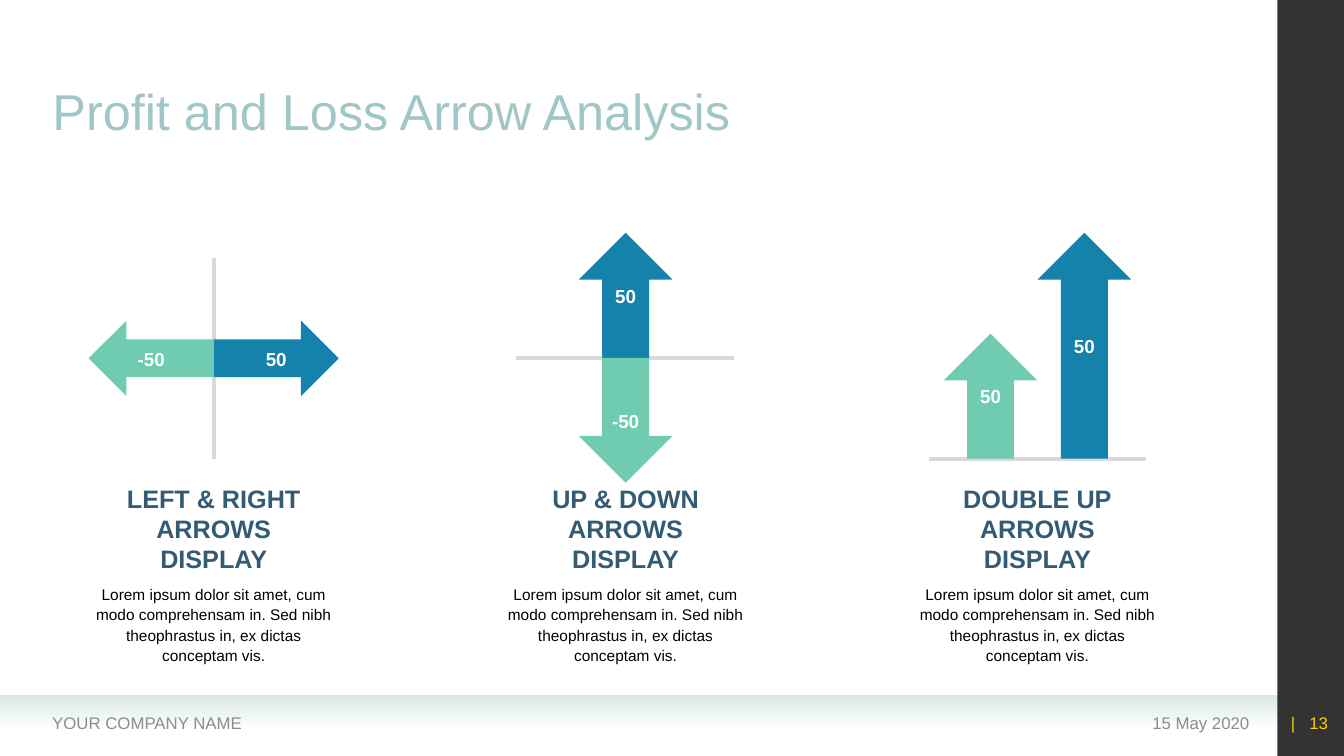
"""Build the profit and loss arrow analysis slide."""
from dataclasses import dataclass

from lxml.etree import SubElement
from pptx import Presentation
from pptx.dml.color import RGBColor
from pptx.enum.shapes import MSO_CONNECTOR, MSO_SHAPE as SHAPE
from pptx.enum.text import MSO_ANCHOR as ANCHOR, PP_ALIGN as ALIGN
from pptx.oxml.ns import qn
from pptx.util import Inches, Pt

Box = tuple[float, float, float, float]

BLUE, GREEN, GREY = "1482AB", "70CCB1", "D9D9D9"
COLUMN_LEFT, COLUMN_STEP, COLUMN_WIDTH = 0.88, 4.085, 2.48
LABEL_WIDTH, LABEL_HEIGHT = 0.5, 0.33
HEADING_WIDTH = 2.26
LOREM = ("Lorem ipsum dolor sit amet, cum modo comprehensam in. "
         "Sed nibh theophrastus in, ex dictas conceptam vis.")


@dataclass
class TextStyle:
    size: float
    color: str
    bold: bool = False
    align: ALIGN = ALIGN.CENTER
    anchor: ANCHOR = ANCHOR.BOTTOM
    wrap: bool = True
    line_spacing: float | Pt | None = None
    space_before: Pt | None = None
    inset_x: float = 0.1
    inset_y: float = 0.05


@dataclass
class Arrow:
    preset: SHAPE
    box: Box
    color: str
    value: str


@dataclass
class Column:
    heading: str
    axis: Box
    arrows: list[Arrow]


TITLE = TextStyle(36, "A0C7C5", align=ALIGN.LEFT, line_spacing=0.9)
VALUE = TextStyle(13.4, "FFFFFF", bold=True, wrap=False)
HEADING = TextStyle(18, "335B74", bold=True)
BODY = TextStyle(11, "000000", anchor=ANCHOR.TOP, line_spacing=Pt(14.7),
                 space_before=Pt(2.2), inset_x=0.04, inset_y=0.02)
COMPANY = TextStyle(12, "8C8C8C", align=ALIGN.LEFT, anchor=ANCHOR.MIDDLE)
DATE = TextStyle(12, "8C8C8C", align=ALIGN.RIGHT, anchor=ANCHOR.MIDDLE)
PAGE = TextStyle(12, "FFCC00", align=ALIGN.RIGHT, anchor=ANCHOR.MIDDLE)

COLUMNS = [
    Column("LEFT & RIGHT", (2.12, 2.56, 2.12, 4.55), [
        Arrow(SHAPE.RIGHT_ARROW, (2.12, 3.18, 1.24, 0.75), BLUE, "50"),
        Arrow(SHAPE.LEFT_ARROW, (0.88, 3.18, 1.24, 0.75), GREEN, "-50")]),
    Column("UP & DOWN", (7.28, 3.55, 5.12, 3.55), [
        Arrow(SHAPE.UP_ARROW, (5.74, 2.31, 0.93, 1.24), BLUE, "50"),
        Arrow(SHAPE.DOWN_ARROW, (5.74, 3.55, 0.93, 1.24), GREEN, "-50")]),
    Column("DOUBLE UP", (11.37, 4.55, 9.21, 4.55), [
        Arrow(SHAPE.UP_ARROW, (9.36, 3.31, 0.93, 1.24), GREEN, "50"),
        Arrow(SHAPE.UP_ARROW, (10.29, 2.31, 0.93, 2.24), BLUE, "50")]),
]

FOOTERS = [
    ("15 May 2020", (9.1, 6.97, 3.39, 0.4), DATE),
    ("YOUR COMPANY NAME", (0.42, 6.97, 4.9, 0.4), COMPANY),
    ("|   13", (12.6, 6.97, 0.67, 0.4), PAGE),
]


def rgb(value: str) -> RGBColor:
    return RGBColor.from_string(value)


def assign(target, values: dict) -> None:
    for name, value in values.items():
        setattr(target, name, value)


def write(shape, text: str, style: TextStyle) -> None:
    frame = shape.text_frame
    frame.text = text
    assign(frame, {
        "word_wrap": style.wrap, "vertical_anchor": style.anchor,
        "margin_left": Inches(style.inset_x), "margin_right": Inches(style.inset_x),
        "margin_top": Inches(style.inset_y), "margin_bottom": Inches(style.inset_y)})
    for paragraph in frame.paragraphs:
        assign(paragraph, {"alignment": style.align, "line_spacing": style.line_spacing,
                           "space_before": style.space_before})
        for run in paragraph.runs:
            assign(run.font, {"name": "Arial", "size": Pt(style.size), "bold": style.bold})
            run.font.color.rgb = rgb(style.color)


def add_text(slide, text: str, box: Box, style: TextStyle) -> None:
    write(slide.shapes.add_textbox(*map(Inches, box)), text, style)


def add_block(slide, preset: SHAPE, box: Box, color: str):
    block = slide.shapes.add_shape(preset, *map(Inches, box))
    block.shadow.inherit = False
    block.fill.solid()
    block.fill.fore_color.rgb = rgb(color)
    block.line.fill.background()
    return block


def set_alpha(block, percent: int) -> None:
    last_color = list(block.fill._xPr.iter(qn("a:srgbClr")))[-1]
    SubElement(last_color, qn("a:alpha")).set("val", str(percent * 1000))


def add_axis(slide, ends: Box) -> None:
    axis = slide.shapes.add_connector(MSO_CONNECTOR.STRAIGHT, *map(Inches, ends))
    axis.line.color.rgb = rgb(GREY)
    axis.line.width = Pt(3)
    SubElement(axis._element.spPr, qn("a:effectLst"))


def add_arrow(slide, arrow: Arrow) -> None:
    add_block(slide, arrow.preset, arrow.box, arrow.color)
    left, top, width, height = arrow.box
    label = (left + (width - LABEL_WIDTH) / 2, top + (height - LABEL_HEIGHT) / 2,
             LABEL_WIDTH, LABEL_HEIGHT)
    add_text(slide, arrow.value, label, VALUE)


def add_column(slide, index: int, column: Column) -> None:
    left = COLUMN_LEFT + index * COLUMN_STEP
    add_axis(slide, column.axis)
    for arrow in column.arrows:
        add_arrow(slide, arrow)
    heading_left = left + (COLUMN_WIDTH - HEADING_WIDTH) / 2
    add_text(slide, f"{column.heading}\nARROWS DISPLAY",
             (heading_left, 5.03, HEADING_WIDTH, 0.71), HEADING)
    add_text(slide, LOREM, (left, 5.76, COLUMN_WIDTH, 0.86), BODY)


def add_frame(slide) -> None:
    band = add_block(slide, SHAPE.RECTANGLE, (0, 6.9, 12.67, 0.31), "D9E9E8")
    band.fill.gradient()
    band.fill.gradient_angle = 270
    for stop in band.fill.gradient_stops:
        stop.color.rgb = rgb("D9E9E8")
    set_alpha(band, 0)
    sidebar = add_block(slide, SHAPE.RECTANGLE, (12.67, 0, 0.67, 7.5), "000000")
    set_alpha(sidebar, 80)
    for text, box, style in FOOTERS:
        add_text(slide, text, box, style)


def main() -> None:
    deck = Presentation()
    assign(deck, {"slide_width": Inches(13.33), "slide_height": Inches(7.5)})
    slide = deck.slides.add_slide(deck.slide_layouts[5])
    title = slide.shapes.title
    assign(title, {"left": Inches(0.42), "top": Inches(0.2),
                   "width": Inches(11.21), "height": Inches(1.25)})
    write(title, "Profit and Loss Arrow Analysis", TITLE)
    add_frame(slide)
    for index, column in enumerate(COLUMNS):
        add_column(slide, index, column)
    deck.save("out.pptx")


if __name__ == "__main__":
    main()
